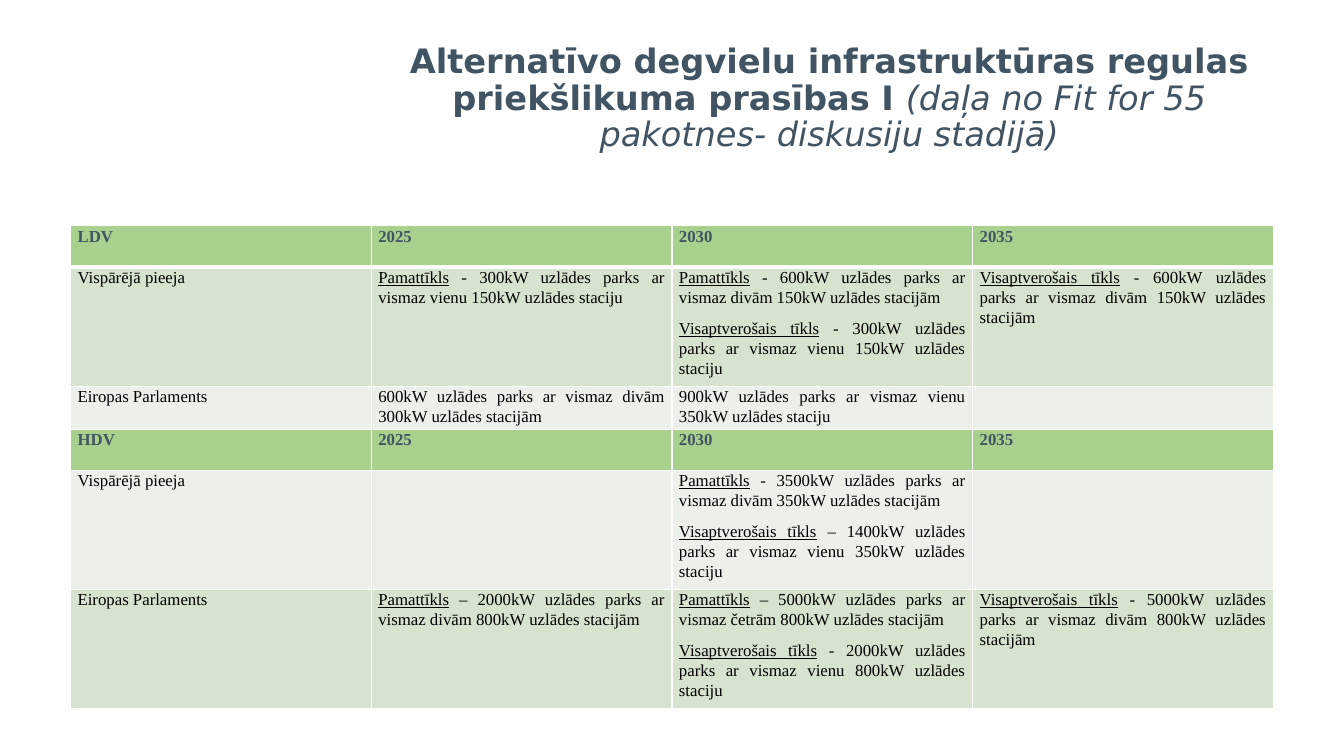
from dataclasses import dataclass

from pptx import Presentation, util as u
from pptx.dml.color import RGBColor
from pptx.enum import text
from pptx.oxml import parse_xml
from pptx.oxml.ns import nsdecls


@dataclass(frozen=True)
class Theme:
    slate: str = "415463"
    black: str = "000000"
    white: str = "FFFFFF"
    header: str = "A9D18E"
    dark_band: str = "D5E3CF"
    light_band: str = "EBF1E9"
    title_font: str = "DejaVu Sans"
    table_font: str = "Times New Roman"
    title_size: int = 24
    table_size: int = 12


class SlideBuilder:
    def __init__(self, slide, theme):
        self.slide = slide
        self.theme = theme

    def style(self, paragraph, name, size, color, bold=None):
        font = paragraph.font
        font.name, font.size, font.bold = name, u.Pt(size), bold
        font.color.rgb = RGBColor.from_string(color)

    def title(self, left, top, width, height, strong, aside):
        box = self.slide.shapes.add_textbox(*map(u.Inches, (left, top, width, height)))
        frame = box.text_frame
        frame.word_wrap = True
        frame.vertical_anchor = text.MSO_ANCHOR.MIDDLE
        paragraph = frame.paragraphs[0]
        paragraph.alignment = text.PP_ALIGN.CENTER
        paragraph.line_spacing = 0.9
        self.style(paragraph, self.theme.title_font, self.theme.title_size, self.theme.slate)
        run = paragraph.add_run()
        run.text, run.font.bold = strong, True
        run = paragraph.add_run()
        run.text, run.font.italic = aside, True

    def table(self, left, top, width, height, row_height, rows):
        frame = self.slide.shapes.add_table(
            len(rows), len(rows[0][1]), *map(u.Inches, (left, top, width, height)))
        table = frame.table
        for row_index, (fill, contents) in enumerate(rows):
            table.rows[row_index].height = u.Inches(row_height)
            for column_index, content in enumerate(contents):
                cell = table.cell(row_index, column_index)
                self.borders(cell, top=3 if row_index == 1 else 1,
                             bottom=3 if row_index == 0 else 1)
                self.cell(cell, fill, content)
        frame.height = u.Inches(height)  # rows grow with their text

    def borders(self, cell, top, bottom):
        properties = cell._tc.get_or_add_tcPr()
        for side, points in (("L", 1), ("R", 1), ("T", top), ("B", bottom)):
            properties.append(parse_xml(
                f'<a:ln{side} {nsdecls("a")} w="{u.Pt(points)}"><a:solidFill>'
                f'<a:srgbClr val="{self.theme.white}"/></a:solidFill></a:ln{side}>'))

    def cell(self, cell, fill, content):
        """Fill a cell; each paragraph is an (underlined, plain) pair."""
        is_header = fill == self.theme.header
        cell.fill.solid()
        cell.fill.fore_color.rgb = RGBColor.from_string(fill)
        cell.margin_left = cell.margin_right = u.Inches(0.07)
        cell.margin_top = cell.margin_bottom = 0
        for index, (underlined, plain) in enumerate(content):
            frame = cell.text_frame
            paragraph = frame.add_paragraph() if index else frame.paragraphs[0]
            paragraph.alignment = text.PP_ALIGN.JUSTIFY
            paragraph.line_spacing = 1.07
            paragraph.space_after = u.Pt(8)
            self.style(paragraph, self.theme.table_font, self.theme.table_size,
                       self.theme.slate if is_header else self.theme.black, is_header)
            if underlined:
                run = paragraph.add_run()
                run.text, run.font.underline = underlined, True
            paragraph.add_run().text = plain


def plain(words):
    return [("", words)]


def core(words):
    return [("Pamattīkls", words)]


def wide(words):
    return [("Visaptverošais tīkls", words)]


def header(vehicle_class):
    return [plain(label) for label in (vehicle_class, "2025", "2030", "2035")]


def main():
    presentation = Presentation()
    presentation.slide_width = u.Inches(13.33)
    presentation.slide_height = u.Inches(7.5)
    theme = Theme()
    builder = SlideBuilder(presentation.slides.add_slide(presentation.slide_layouts[6]), theme)

    # Title
    builder.title(3.78, 0.42, 8.89, 1.13,
                  "Alternatīvo degvielu infrastruktūras regulas priekšlikuma prasības I ",
                  "(daļa no Fit for 55 pakotnes- diskusiju stadijā)")

    # Requirements for light and heavy vehicles
    council, parliament = plain("Vispārējā pieeja"), plain("Eiropas Parlaments")
    rows = [
        (theme.header, header("LDV")),
        (theme.dark_band, [
            council,
            core(" - 300kW uzlādes parks ar vismaz vienu 150kW uzlādes staciju"),
            core(" - 600kW uzlādes parks ar vismaz divām 150kW uzlādes stacijām")
            + wide(" - 300kW uzlādes parks ar vismaz vienu 150kW uzlādes staciju"),
            wide(" - 600kW uzlādes parks ar vismaz divām 150kW uzlādes stacijām")]),
        (theme.light_band, [
            parliament,
            plain("600kW uzlādes parks ar vismaz divām 300kW uzlādes stacijām"),
            plain("900kW uzlādes parks ar vismaz vienu 350kW uzlādes staciju"),
            []]),
        (theme.header, header("HDV")),
        (theme.light_band, [
            council,
            [],
            core(" - 3500kW uzlādes parks ar vismaz divām 350kW uzlādes stacijām")
            + wide(" – 1400kW uzlādes parks ar vismaz vienu 350kW uzlādes staciju"),
            []]),
        (theme.dark_band, [
            parliament,
            core(" – 2000kW uzlādes parks ar vismaz divām 800kW uzlādes stacijām"),
            core(" – 5000kW uzlādes parks ar vismaz četrām 800kW uzlādes stacijām")
            + wide(" - 2000kW uzlādes parks ar vismaz vienu 800kW uzlādes staciju"),
            wide(" - 5000kW uzlādes parks ar vismaz divām 800kW uzlādes stacijām")]),
    ]
    builder.table(0.7, 2.24, 11.93, 4.78, 0.41, rows)

    presentation.save("out.pptx")


if __name__ == "__main__":
    main()
